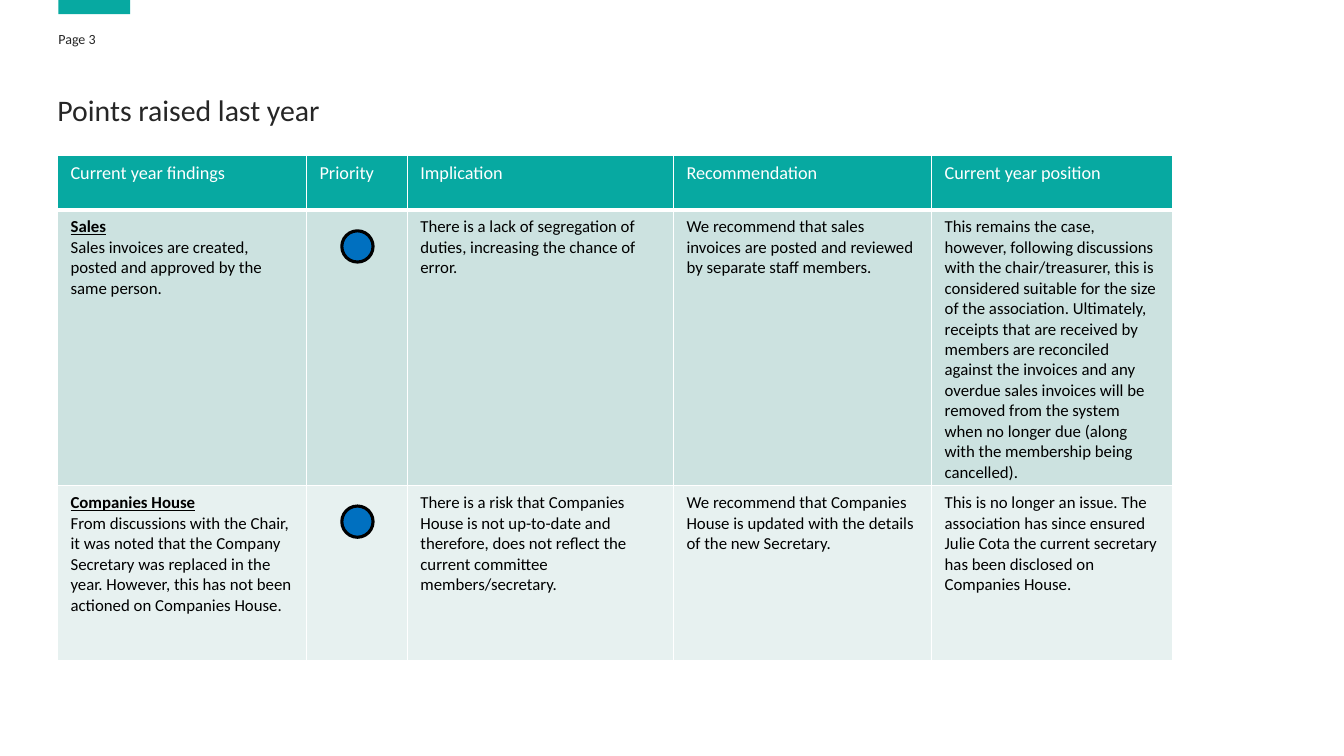
from lxml.etree import SubElement
from pptx import Presentation
from pptx.dml.color import RGBColor
from pptx.enum.shapes import MSO_SHAPE as Shape
from pptx.oxml.ns import qn
from pptx.util import Inches, Pt

TEAL, WHITE, BLACK, CHARCOAL = "07A9A1", "FFFFFF", "000000", "262626"
PRIORITY_BLUE = "0070C0"
ROW_FILLS = [TEAL, "CCE2E0", "E7F1F0"]


def color(hex_code):
    return RGBColor.from_string(hex_code)


def write(paragraph, text, size=12, ink=BLACK, heading=False, spacing=None):
    """Fill one paragraph with formatted text."""
    paragraph.line_spacing = spacing
    font = paragraph.font
    if text:
        run = paragraph.add_run()
        run.text = text
        font = run.font
    font.name = "Calibri"
    font.size = Pt(size)
    font.bold = font.underline = heading
    font.color.rgb = color(ink)


class FindingsSlide:
    def __init__(self, presentation):
        self.slide = presentation.slides.add_slide(presentation.slide_layouts[6])
        self.shapes = self.slide.shapes

    def shape(self, kind, left, top, width, height, fill, outline=None):
        item = self.shapes.add_shape(
            kind, Inches(left), Inches(top), Inches(width), Inches(height))
        item.shadow.inherit = False
        item.fill.solid()
        item.fill.fore_color.rgb = color(fill)
        if outline:
            item.line.color.rgb = color(outline)
            item.line.width = Pt(2.25)
        else:
            item.line.fill.background()

    def text(self, text, left, top, width, height, size):
        frame = self.shapes.add_textbox(
            Inches(left), Inches(top), Inches(width), Inches(height)).text_frame
        frame.word_wrap = True
        frame.margin_left = frame.margin_right = 0
        frame.margin_top = frame.margin_bottom = 0
        write(frame.paragraphs[0], text, size=size, ink=CHARCOAL, spacing=0.9)

    def border(self, cell, bottom_width):
        properties = cell._tc.get_or_add_tcPr()
        for side in ("lnL", "lnR", "lnT", "lnB"):
            width = bottom_width if side == "lnB" else 1
            line = SubElement(properties, qn(f"a:{side}"), w=str(Pt(width)))
            fill = SubElement(line, qn("a:solidFill"))
            SubElement(fill, qn("a:srgbClr"), val=WHITE)

    def cell(self, cell, content, row):
        header = row == 0
        cell.margin_left = cell.margin_right = Inches(0.13)
        cell.margin_top = cell.margin_bottom = Inches(0.07)
        self.border(cell, 3 if header else 1)
        cell.fill.solid()
        cell.fill.fore_color.rgb = color(ROW_FILLS[row])
        frame = cell.text_frame
        lines = content.split("\n")
        for index, line in enumerate(lines):
            paragraph = frame.add_paragraph() if index else frame.paragraphs[0]
            write(paragraph, line, size=13 if header else 12,
                  ink=WHITE if header else BLACK,
                  heading=len(lines) > 1 and index == 0)

    def table(self, rows, left, top, widths, heights):
        table = self.shapes.add_table(
            len(rows), len(widths), Inches(left), Inches(top),
            Inches(sum(widths)), Inches(sum(heights))).table
        for column, width in zip(table.columns, widths):
            column.width = Inches(width)
        for row, height in zip(table.rows, heights):
            row.height = Inches(height)
        for row, contents in enumerate(rows):
            for column, content in enumerate(contents):
                self.cell(table.cell(row, column), content, row)


FINDINGS = [
    ["Current year findings", "Priority", "Implication", "Recommendation",
     "Current year position"],
    ["Sales\nSales invoices are created, posted and approved by the same person.",
     "",
     "There is a lack of segregation of duties, increasing the chance of error.",
     "We recommend that sales invoices are posted and reviewed by separate "
     "staff members.",
     "This remains the case, however, following discussions with the "
     "chair/treasurer, this is considered suitable for the size of the "
     "association. Ultimately, receipts that are received by members are "
     "reconciled against the invoices and any overdue sales invoices will be "
     "removed from the system when no longer due (along with the membership "
     "being cancelled)."],
    ["Companies House\nFrom discussions with the Chair, it was noted that the "
     "Company Secretary was replaced in the year. However, this has not been "
     "actioned on Companies House.",
     "",
     "There is a risk that Companies House is not up-to-date and therefore, "
     "does not reflect the current committee members/secretary.",
     "We recommend that Companies House is updated with the details of the "
     "new Secretary.",
     "This is no longer an issue. The association has since ensured Julie Cota "
     "the current secretary has been disclosed on Companies House."],
]


def main():
    presentation = Presentation()
    presentation.slide_width = Inches(13.33)
    presentation.slide_height = Inches(7.5)
    page = FindingsSlide(presentation)

    # Page tab, number and title
    page.shape(Shape.RECTANGLE, 0.58, 0, 0.71, 0.14, TEAL)
    page.text("Page 3", 0.58, 0.32, 2.66, 0.16, size=10)
    page.text("Points raised last year", 0.57, 0.95, 12.18, 0.51, size=21.3)

    # Findings table
    page.table(FINDINGS, 0.57, 1.54, widths=[2.47, 1, 2.64, 2.56, 2.39],
               heights=[0.54, 2.73, 1.73])

    # Priority markers
    for marker_top in (2.29, 5.02):
        page.shape(Shape.OVAL, 3.39, marker_top, 0.31, 0.31,
                   PRIORITY_BLUE, outline=BLACK)

    presentation.save("out.pptx")


if __name__ == "__main__":
    main()
